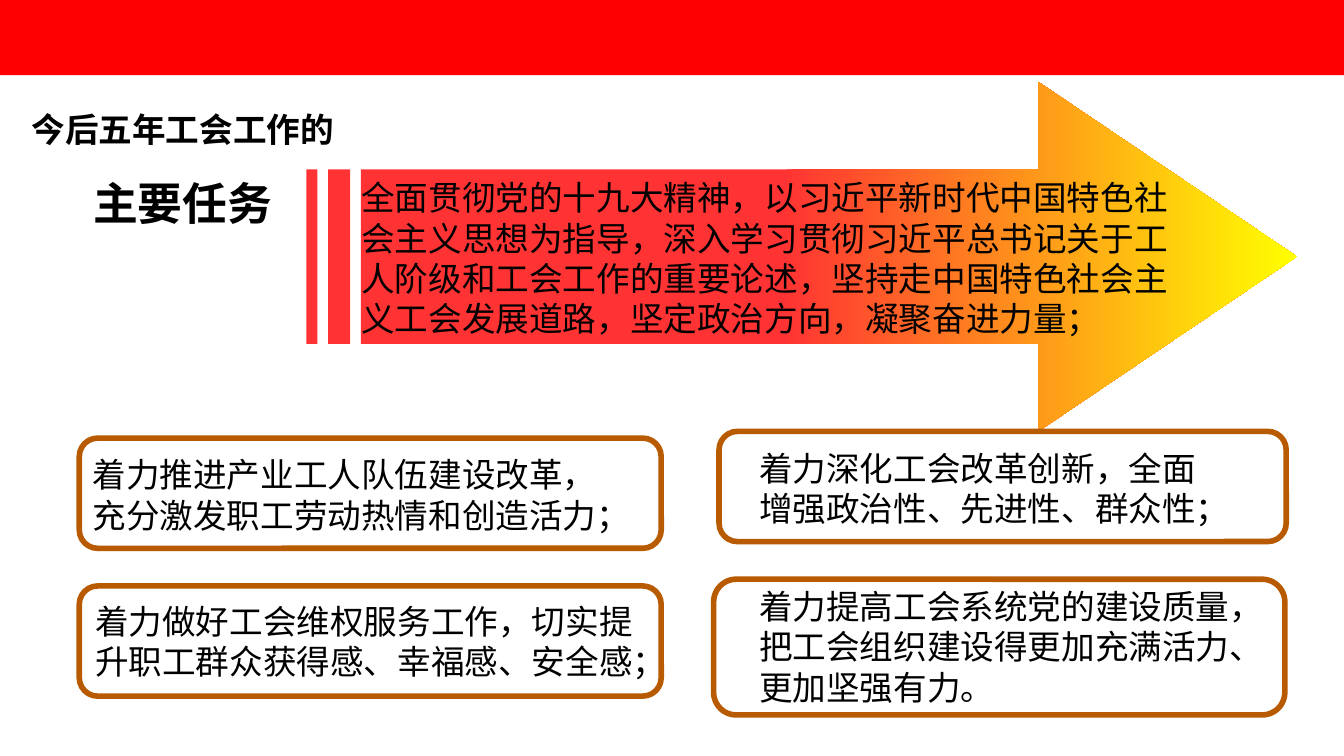
from lxml import etree
from pptx import Presentation
from pptx.dml.color import RGBColor
from pptx.enum.shapes import MSO_SHAPE as Kind
from pptx.enum.text import PP_ALIGN as Align
from pptx.oxml.ns import qn
from pptx.util import Inches, Pt

FONT = "Noto Sans CJK SC"
WIDTH = Inches(10)
HEIGHT = WIDTH * 9 // 16
BODY = {"line_spacing": 1.0, "alignment": Align.LEFT}
TITLE = {"line_spacing": 1.5, "alignment": Align.CENTER}

GOAL = ("全面贯彻党的十九大精神，以习近平新时代中国特色社会主义思想为指导，"
        "深入学习贯彻习近平总书记关于工人阶级和工会工作的重要论述，"
        "坚持走中国特色社会主义工会发展道路，坚定政治方向，凝聚奋进力量；")

# Each task: text, text box, frame
TASKS = [
    ("着力推进产业工人队伍建设改革，充分激发职工劳动热情和创造活力；",
     (0.59, 3.33, 4.12, 0.71), (0.59, 3.26, 4.33, 0.82)),
    ("着力做好工会维权服务工作，切实提升职工群众获得感、幸福感、安全感；",
     (0.61, 4.42, 4.31, 0.71), (0.59, 4.36, 4.33, 0.82)),
    ("着力深化工会改革创新，全面增强政治性、先进性、群众性；",
     (5.55, 3.28, 3.58, 0.71), (5.35, 3.21, 4.22, 0.82)),
    ("着力提高工会系统党的建设质量，把工会组织建设得更加充满活力、更加坚强有力。",
     (5.55, 4.31, 4.02, 1.01), (5.31, 4.31, 4.25, 1.01)),
]


def color(code):
    return RGBColor.from_string(code)


def put(obj, style):
    for key, val in style.items():
        setattr(obj, key, val)


def add_form(slide, kind, box, fill=None, line=None):
    shape = slide.shapes.add_shape(kind, *map(Inches, box))
    shape.shadow.inherit = False
    if fill:
        shape.fill.solid()
        shape.fill.fore_color.rgb = color(fill)
    else:
        shape.fill.background()
    if line:
        shape.line.color.rgb = color(line)
        shape.line.width = Pt(3)
    else:
        shape.line.fill.background()
    return shape


def add_arrow(slide, box):
    arrow = add_form(slide, Kind.STRIPED_RIGHT_ARROW, box)
    arrow.adjustments[1] = 0.74
    arrow.fill.gradient()
    arrow.fill.gradient_angle = 0
    stops = zip(arrow.fill.gradient_stops, (0.48, 1), ("FF3333", "FFFF00"))
    for stop, place, code in stops:
        stop.position = place
        stop.color.rgb = color(code)


def add_text(slide, box, runs, style):
    frame = slide.shapes.add_textbox(*map(Inches, box)).text_frame
    frame.word_wrap = True
    para = frame.paragraphs[0]
    put(para, style)
    for text, size, bold in runs:
        run = para.add_run()
        run.text = text
        put(run.font, {"name": FONT, "size": Pt(size), "bold": bold})
        run.font.color.rgb = color("000000")
        # East Asian glyphs need their own typeface entry
        etree.SubElement(run.font._element, qn("a:ea"), typeface=FONT)


def main():
    deck = Presentation()
    put(deck, {"slide_width": WIDTH, "slide_height": HEIGHT})
    slide = deck.slides.add_slide(deck.slide_layouts[6])

    # Top band and arrow
    add_form(slide, Kind.RECTANGLE, (0, 0, 10, 0.56), fill="FF0000")
    add_arrow(slide, (2.28, 0.61, 7.37, 2.6))

    # Heading and main goal
    heading = [("今后五年工会工作的", 18, True), ("主要任务", 24, True)]
    add_text(slide, (0.12, 0.61, 2.48, 1.09), heading, TITLE)
    add_text(slide, (2.59, 1.27, 6.22, 1.62), [(GOAL, 18, False)], BODY)

    # Framed tasks
    for text, box, edge in TASKS:
        add_text(slide, box, [(text, 18, False)], BODY)
        add_form(slide, Kind.ROUNDED_RECTANGLE, edge, line="B85A00")

    deck.save("out.pptx")


if __name__ == "__main__":
    main()
